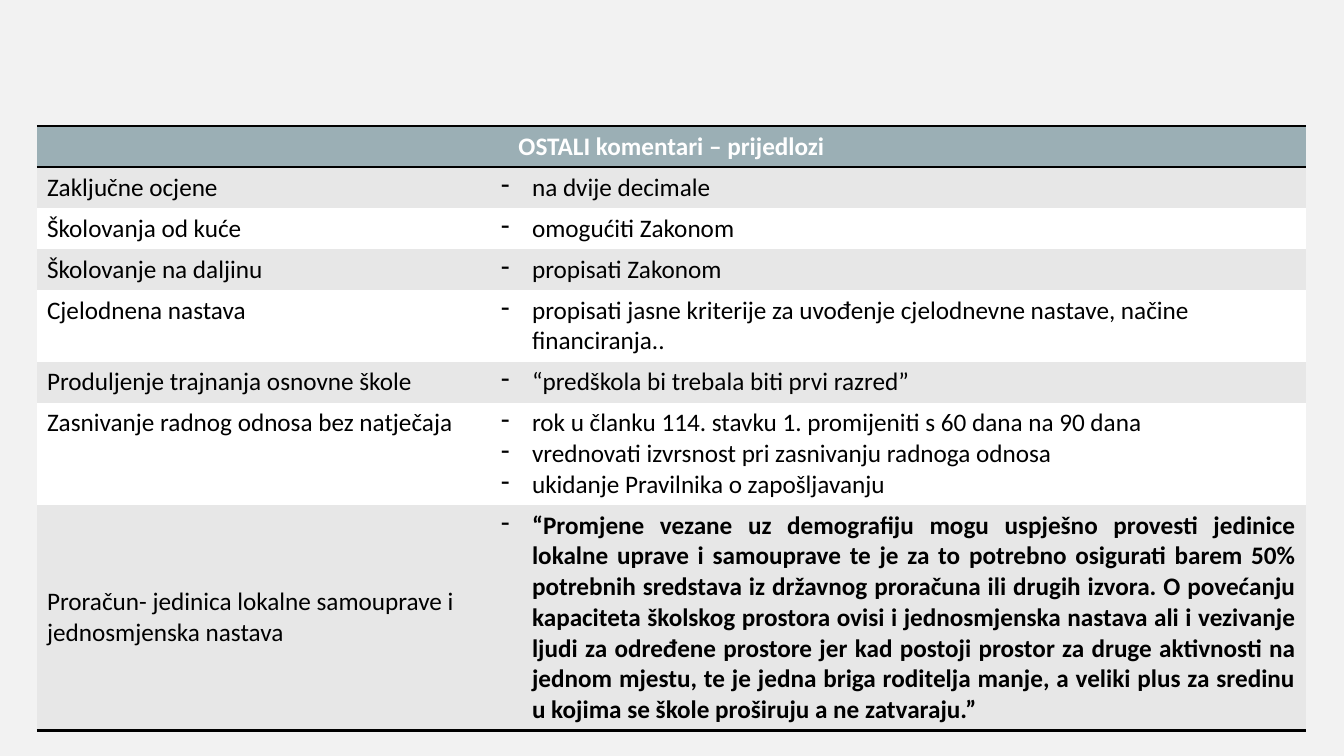
import pptx
import pptx.dml.color
import pptx.enum.text
import pptx.oxml
import pptx.oxml.ns
import pptx.util

EMU_PER_PX = 914400 / 100.8
BACKGROUND = pptx.dml.color.RGBColor(0xF2, 0xF2, 0xF2)
HEADER_FILL = pptx.dml.color.RGBColor(0x9B, 0xAF, 0xB5)
BAND_FILL = pptx.dml.color.RGBColor(0xE7, 0xE7, 0xE7)
WHITE = pptx.dml.color.RGBColor(0xFF, 0xFF, 0xFF)
BLACK = pptx.dml.color.RGBColor(0x00, 0x00, 0x00)
NO_STYLE_NO_GRID = "{2D5ABB26-0587-4C30-8999-92F81FD0307C}"
ALIGN = pptx.enum.text.PP_ALIGN
MIDDLE = pptx.enum.text.MSO_ANCHOR.MIDDLE
COLUMN_WIDTHS = [454, 815]
ROW_HEIGHT = 41
DASH_INDENT = 31

TITLE = "OSTALI komentari – prijedlozi"
PROPOSALS = [
    ("Zaključne ocjene", ["na dvije decimale"]),
    ("Školovanja od kuće", ["omogućiti Zakonom"]),
    ("Školovanje na daljinu", ["propisati Zakonom"]),
    ("Cjelodnena nastava", [
        "propisati jasne kriterije za uvođenje cjelodnevne nastave, načine financiranja.."]),
    ("Produljenje trajnanja osnovne škole", ["“predškola bi trebala biti prvi razred”"]),
    ("Zasnivanje radnog odnosa bez natječaja", [
        "rok u članku 114. stavku 1. promijeniti s 60 dana na 90 dana",
        "vrednovati izvrsnost pri zasnivanju radnoga odnosa",
        "ukidanje Pravilnika o zapošljavanju"]),
    ("Proračun- jedinica lokalne samouprave i jednosmjenska nastava", [
        "“Promjene vezane uz demografiju mogu uspješno provesti jedinice lokalne uprave i "
        "samouprave te je za to potrebno osigurati barem 50% potrebnih sredstava iz državnog "
        "proračuna ili drugih izvora. O povećanju kapaciteta školskog prostora ovisi i "
        "jednosmjenska nastava ali i vezivanje ljudi za određene prostore jer kad postoji "
        "prostor za druge aktivnosti na jednom mjestu, te je jedna briga roditelja manje, "
        "a veliki plus za sredinu u kojima se škole proširuju a ne zatvaraju.”"]),
]


def px(length):
    """Turn pixels into EMU."""
    return pptx.util.Emu(round(length * EMU_PER_PX))


def write_text(paragraph, text, color=BLACK, bold=False, align=ALIGN.LEFT, dash=False):
    """Write formatted text into a paragraph, with a hanging dash if asked."""
    paragraph.alignment = align
    run = paragraph.add_run()
    run.text = text
    run.font.name = "Calibri"
    run.font.size = pptx.util.Pt(18)
    run.font.bold = bold
    run.font.color.rgb = color
    if dash:
        properties = paragraph._p.get_or_add_pPr()
        properties.set("marL", str(px(DASH_INDENT)))
        properties.set("indent", str(-px(DASH_INDENT)))
        bullet = pptx.oxml.parse_xml(
            f'<a:buChar {pptx.oxml.ns.nsdecls("a")} char="-"/>')
        properties.append(bullet)


def fill_cell(cell, color, edges=()):
    """Fill a cell and draw black lines on the given edges."""
    cell.fill.solid()
    cell.fill.fore_color.rgb = color
    for index, edge in enumerate(edges):
        line = pptx.oxml.parse_xml(
            f'<a:ln{edge} {pptx.oxml.ns.nsdecls("a")} w="{pptx.util.Pt(2)}">'
            f'<a:solidFill><a:srgbClr val="{BLACK}"/></a:solidFill></a:ln{edge}>')
        cell._tc.get_or_add_tcPr().insert(index, line)


def add_plain_table(slide, left, top, row_count):
    """Add a table without style, with the fixed columns and row height."""
    frame = slide.shapes.add_table(
        row_count, len(COLUMN_WIDTHS), px(left), px(top),
        px(sum(COLUMN_WIDTHS)), px(ROW_HEIGHT * row_count))
    table = frame.table
    table._tbl.tblPr[0].text = NO_STYLE_NO_GRID
    for column, width in zip(table.columns, COLUMN_WIDTHS):
        column.width = px(width)
    return table


def fill_header(table):
    """Write the title across the first row."""
    for cell in table.rows[0].cells:
        fill_cell(cell, HEADER_FILL, "TB")
    header = table.cell(0, 0)
    header.merge(table.cell(0, 1))
    header.vertical_anchor = MIDDLE
    write_text(header.text_frame.paragraphs[0], TITLE,
               color=WHITE, bold=True, align=ALIGN.CENTER)


def fill_proposal(table, row, topic, comments):
    """Write one topic and its dashed comments; the last row is emphasised."""
    last = row == len(PROPOSALS)
    topic_cell, comment_cell = table.rows[row].cells
    for cell in (topic_cell, comment_cell):
        fill_cell(cell, BAND_FILL if row % 2 else WHITE, "B" if last else "")
    write_text(topic_cell.text_frame.paragraphs[0], topic)
    if last:
        topic_cell.vertical_anchor = MIDDLE
    frame = comment_cell.text_frame
    for index, comment in enumerate(comments):
        paragraph = frame.add_paragraph() if index else frame.paragraphs[0]
        write_text(paragraph, comment, bold=last, dash=True,
                   align=ALIGN.JUSTIFY if last else ALIGN.LEFT)


def main():
    """Build the slide and save it."""
    presentation = pptx.Presentation()
    presentation.slide_width = px(1344)
    presentation.slide_height = px(756)
    slide = presentation.slides.add_slide(presentation.slide_layouts[6])
    slide.background.fill.solid()
    slide.background.fill.fore_color.rgb = BACKGROUND
    table = add_plain_table(slide, 37, 126, len(PROPOSALS) + 1)
    fill_header(table)
    for row, (topic, comments) in enumerate(PROPOSALS, start=1):
        fill_proposal(table, row, topic, comments)
    presentation.save("out.pptx")


if __name__ == "__main__":
    main()
